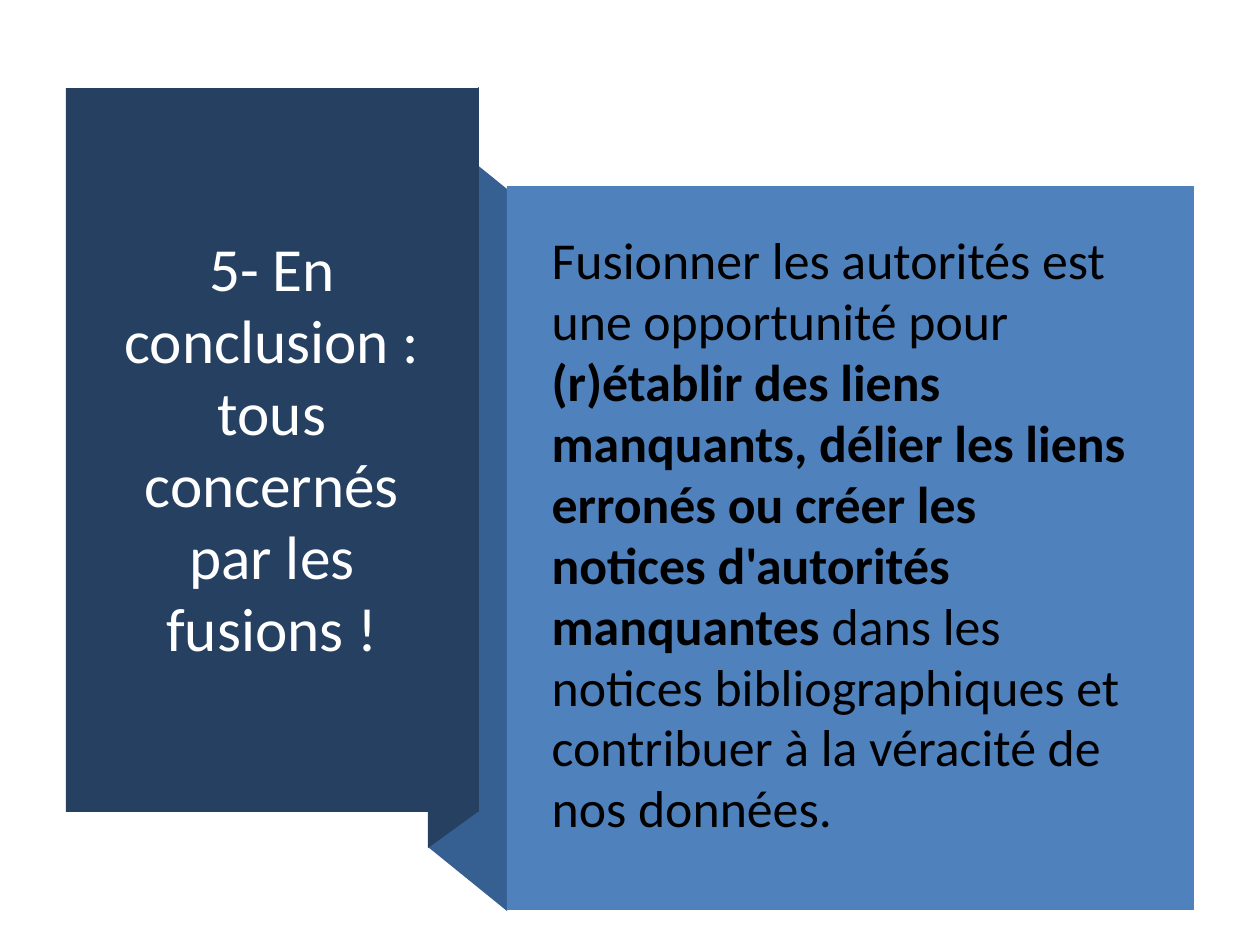
from lxml import etree
from pptx import Presentation
from pptx import util as u
from pptx.dml.color import RGBColor
from pptx.enum import shapes, text
from pptx.oxml import ns

NAVY = RGBColor(0x25, 0x40, 0x61)
FOLD_BLUE = RGBColor(0x37, 0x60, 0x92)
PANEL_BLUE = RGBColor(0x4F, 0x81, 0xBD)
WHITE = RGBColor(0xFF, 0xFF, 0xFF)
BLACK = RGBColor(0x00, 0x00, 0x00)


class Slide:
    font = "Calibri"
    frame_format = {
        "word_wrap": True,
        "auto_size": text.MSO_AUTO_SIZE.NONE,
        "vertical_anchor": text.MSO_ANCHOR.MIDDLE,
    }

    def __init__(self, deck):
        self.page = deck.slides.add_slide(deck.slide_layouts[1])

    @staticmethod
    def px(length):
        return u.Emu(round(length * 914400 / 126))

    def paint(self, shape, color):
        shape.shadow.inherit = False
        shape.fill.solid()
        shape.fill.fore_color.rgb = color
        shape.line.fill.background()

    def outline(self, points, color):
        builder = self.page.shapes.build_freeform(*points[0], scale=914400 / 126)
        builder.add_line_segments(points[1:], close=True)
        self.paint(builder.convert_to_shape(), color)

    def panel(self, left, top, width, height, color):
        area = map(self.px, (left, top, width, height))
        self.paint(self.page.shapes.add_shape(shapes.MSO_SHAPE.RECTANGLE, *area), color)

    def words(self, index, area, spans, size, color, align):
        box = self.page.placeholders[index]
        for name, length in zip(("left", "top", "width", "height"), area):
            setattr(box, name, self.px(length))
        self.page.shapes.element.append(box.element)
        for name, value in self.frame_format.items():
            setattr(box.text_frame, name, value)
        para = box.text_frame.paragraphs[0]
        for name, value in {"alignment": align, "line_spacing": 0.98}.items():
            setattr(para, name, value)
        properties = para._p.get_or_add_pPr()
        properties.set("marL", "0")
        properties.set("indent", "0")
        etree.SubElement(properties, ns.qn("a:buNone"))
        for content, bold in spans:
            span = para.add_run()
            span.text = content
            span.font.color.rgb = color
            style = {"name": self.font, "size": u.Pt(size), "bold": bold}
            for name, value in style.items():
                setattr(span.font, name, value)


def main():
    deck = Presentation()
    deck.slide_width, deck.slide_height = u.Inches(10), u.Inches(7.5)
    slide = Slide(deck)
    slide.outline([(507, 911), (428, 847), (428, 125), (507, 189)], FOLD_BLUE)
    slide.outline([(479, 811), (428, 848), (428, 124), (479, 87)], NAVY)
    slide.panel(66, 88, 413, 724, NAVY)
    slide.words(
        0, (97, 135, 350, 629),
        [("5- En conclusion : tous concernés par les fusions !", False)],
        35, WHITE, text.PP_ALIGN.CENTER,
    )
    slide.panel(507, 186, 687, 724, PANEL_BLUE)
    slide.words(
        1, (539, 237, 615, 597),
        [
            ("Fusionner les autorités est une opportunité pour ", False),
            ("(r)établir des liens manquants, délier les liens erronés ou créer "
             "les notices d'autorités manquantes", True),
            (" dans les notices bibliographiques et contribuer à la véracité de "
             "nos données.", False),
        ],
        29.6, BLACK, text.PP_ALIGN.LEFT,
    )
    deck.save("out.pptx")


if __name__ == "__main__":
    main()
